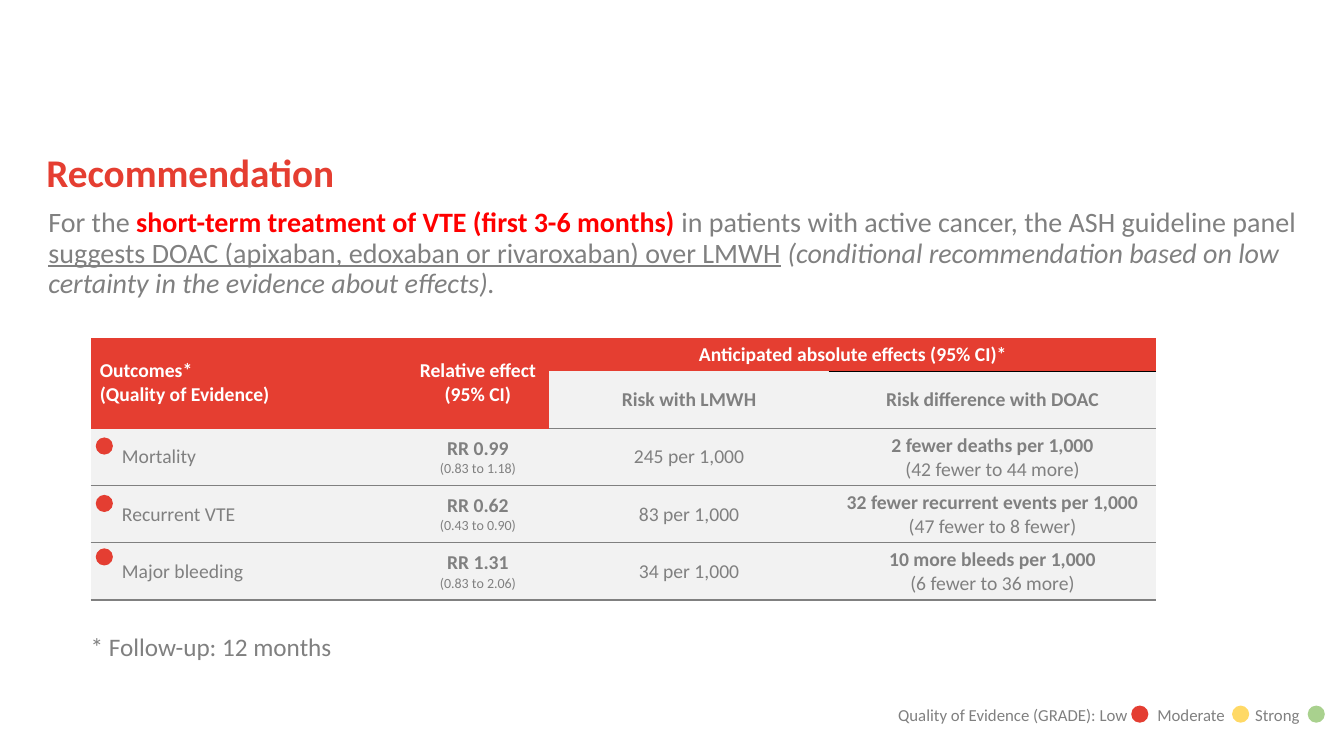
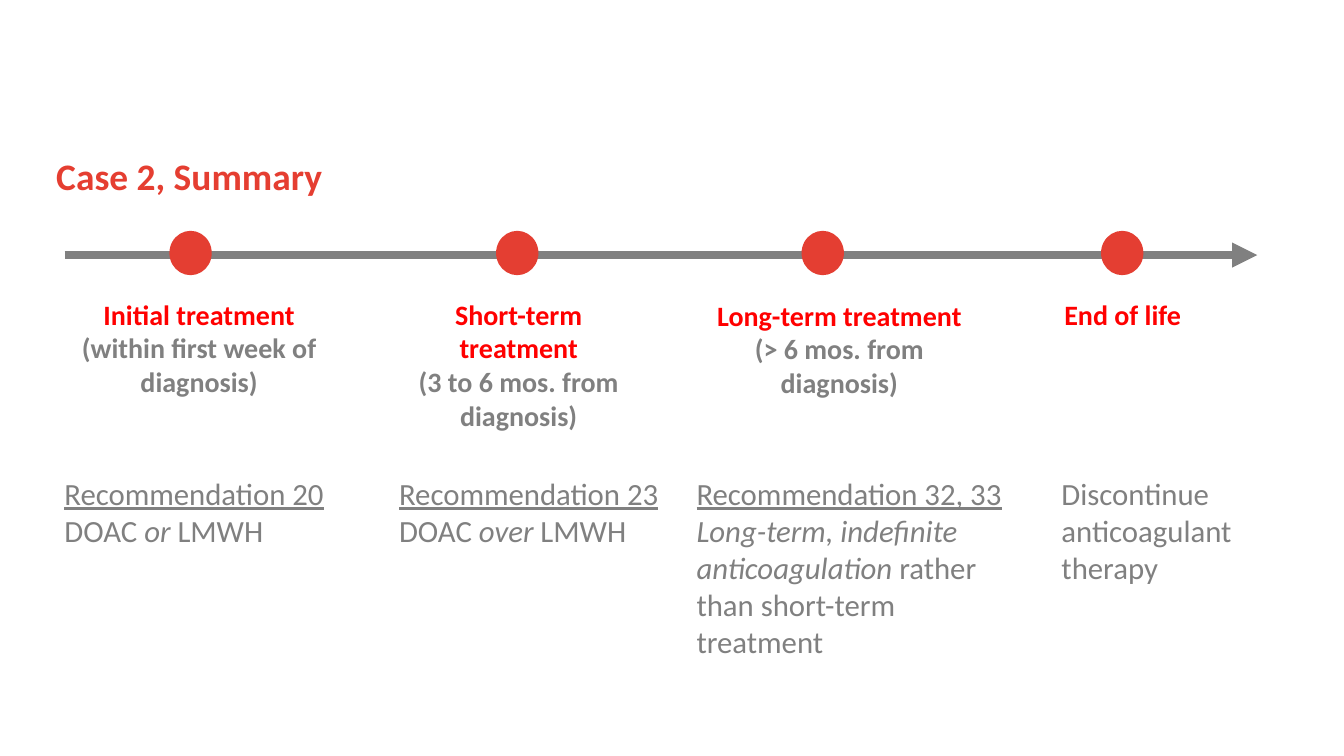
from dataclasses import dataclass

from lxml.etree import SubElement
from pptx import Presentation
from pptx.dml.color import RGBColor
from pptx.enum.shapes import MSO_CONNECTOR, MSO_SHAPE
from pptx.enum.text import MSO_ANCHOR, PP_ALIGN
from pptx.oxml.ns import qn
from pptx.util import Inches, Pt

COLORS = {
    "title": "E53E31", "low": "E43E32", "moderate": "FFD966", "strong": "A9D18E",
    "gray": "808080", "accent": "FF0000", "white": "FFFFFF", "cell": "F2F2F2",
    "black": "000000",
}
FONT = "Calibri"
NO_TABLE_STYLE = "{2D5ABB26-0587-4C30-8999-92F81FD0307C}"


@dataclass
class Span:
    text: str
    color: str = "gray"
    bold: bool = False
    italic: bool = False
    underline: bool = False
    size: float = 0  # zero takes the size of the box


def rgb(name):
    return RGBColor.from_string(COLORS[name])


class SlideBuilder:
    def __init__(self):
        self.deck = Presentation()
        self.deck.slide_width = Inches(13.33)
        self.deck.slide_height = Inches(7.5)
        self.page = None

    def new_page(self, title, size, inset=0.0):
        self.page = self.deck.slides.add_slide(self.deck.slide_layouts[6])
        # The inset is vertical and horizontal in the ratio 1 to 2
        self.text(0.46, 1.47, 12, 0.78, [[Span(title, "title", bold=True)]], size,
                  insets=(2 * inset, inset))

    def fill_text(self, frame, paras, size, align=PP_ALIGN.LEFT, spacing=None, tabs=()):
        frame.word_wrap = True
        for index, spans in enumerate(paras):
            para = frame.paragraphs[0] if index == 0 else frame.add_paragraph()
            para.alignment = align
            if spacing:
                para.line_spacing = spacing
            if tabs:
                tab_list = SubElement(para._p.get_or_add_pPr(), qn("a:tabLst"))
                for position in tabs:
                    SubElement(tab_list, qn("a:tab"), pos=str(Inches(position)), algn="l")
            for span in spans:
                run = para.add_run()
                run.text = span.text
                font = run.font
                font.name, font.size = FONT, Pt(span.size or size)
                font.bold, font.italic = span.bold, span.italic
                font.underline = span.underline
                font.color.rgb = rgb(span.color)

    def text(self, left, top, width, height, paras, size, insets=(0.1, 0.05), **layout):
        box = self.page.shapes.add_textbox(
            Inches(left), Inches(top), Inches(width), Inches(height))
        frame = box.text_frame
        frame.margin_left = frame.margin_right = Inches(insets[0])
        frame.margin_top = frame.margin_bottom = Inches(insets[1])
        self.fill_text(frame, paras, size, **layout)

    def dot(self, left, top, color="low", width=0.17, height=0.17):
        shape = self.page.shapes.add_shape(
            MSO_SHAPE.OVAL, Inches(left), Inches(top), Inches(width), Inches(height))
        shape.shadow.inherit = False
        shape.fill.solid()
        shape.fill.fore_color.rgb = rgb(color)
        shape.line.fill.background()

    def arrow(self, left, right, top, width):
        line = self.page.shapes.add_connector(
            MSO_CONNECTOR.STRAIGHT, Inches(left), Inches(top), Inches(right), Inches(top))
        line.line.color.rgb = rgb("gray")
        line.line.width = Pt(width)
        SubElement(line.line._get_or_add_ln(), qn("a:tailEnd"), type="triangle")
        SubElement(line._element.spPr, qn("a:effectLst"))

    def table(self, left, top, columns, rows):
        frame = self.page.shapes.add_table(
            len(rows), len(columns), Inches(left), Inches(top),
            Inches(sum(columns)), Inches(sum(rows)))
        table = frame.table
        table.first_row = table.horz_banding = False
        table._tbl.tblPr.find(qn("a:tableStyleId")).text = NO_TABLE_STYLE
        for column, width in zip(table.columns, columns):
            column.width = Inches(width)
        for row, height in zip(table.rows, rows):
            row.height = Inches(height)
        return table

    def cell(self, cell, paras, fill="cell", align=PP_ALIGN.CENTER, indent=0.09, borders=()):
        for side, color in borders:
            line = SubElement(cell._tc.get_or_add_tcPr(), qn(f"a:ln{side}"), w=str(Pt(1)))
            solid = SubElement(line, qn("a:solidFill"))
            SubElement(solid, qn("a:srgbClr"), val=COLORS[color])
        cell.fill.solid()
        cell.fill.fore_color.rgb = rgb(fill)
        cell.vertical_anchor = MSO_ANCHOR.MIDDLE
        cell.margin_left, cell.margin_right = Inches(indent), Inches(0.09)
        cell.margin_top = cell.margin_bottom = Inches(0.05)
        self.fill_text(cell.text_frame, paras, 14, align=align)


def build_recommendation(slide):
    slide.new_page("Recommendation", 28)
    slide.text(0.48, 2.07, 12.64, 1.69, [[
        Span("For the "),
        Span("short-term treatment of VTE (first 3-6 months)", "accent", bold=True),
        Span(" in patients with active cancer, the ASH guideline panel "),
        Span("suggests DOAC (apixaban, edoxaban or rivaroxaban) over LMWH", underline=True),
        Span(" "),
        Span("(conditional recommendation based on low certainty in the evidence "
             "about effects).", italic=True),
    ]], 20, insets=(0, 0), spacing=0.9)

    # Quality legend
    slide.text(8.81, 6.94, 4.53, 0.3,
               [[Span("Quality of Evidence (GRADE): Low\tModerate\tStrong")]], 12,
               tabs=(2.57, 3.54))
    for left, color in ((11.22, "low"), (12.22, "moderate"), (12.97, "strong")):
        slide.dot(left, 7, color)

    # Table header
    table = slide.table(0.9, 3.35, (3.13, 1.42, 2.77, 3.25), (0.31, 0.46, 0.52, 0.52, 0.52))
    bottom = ("B", "gray")
    headers = (
        ((0, 0), (1, 0), ("Outcomes*", "(Quality of Evidence)"), PP_ALIGN.LEFT),
        ((0, 1), (1, 1), ("Relative effect", "(95% CI)"), PP_ALIGN.CENTER),
        ((0, 2), (0, 3), ("Anticipated absolute effects (95% CI)*",), PP_ALIGN.CENTER),
    )
    for start, end, lines, align in headers:
        cell = table.cell(*start)
        cell.merge(table.cell(*end))
        slide.cell(cell, [[Span(line, "white", bold=True)] for line in lines], "title", align)
    slide.cell(table.cell(1, 2), [[Span("Risk with LMWH", bold=True)]], borders=[bottom])
    slide.cell(table.cell(1, 3), [[Span("Risk difference with DOAC", bold=True)]],
               borders=[("T", "black"), bottom])

    # Outcome rows, each with its quality dot
    outcomes = (
        (4.34, "Mortality", "RR 0.99", "(0.83 to 1.18)", "245 per 1,000",
         "2 fewer deaths per 1,000", "(42 fewer to 44 more)"),
        (4.91, "Recurrent VTE", "RR 0.62", "(0.43 to 0.90)", "83 per 1,000",
         "32 fewer recurrent events per 1,000", "(47 fewer to 8 fewer)"),
        (5.44, "Major bleeding", "RR 1.31", "(0.83 to 2.06)", "34 per 1,000",
         "10 more bleeds per 1,000", "(6 fewer to 36 more)"),
    )
    for row, (dot_top, name, ratio, interval, risk, change, spread) in enumerate(outcomes, 2):
        slide.cell(table.cell(row, 0), [[Span(name)]], align=PP_ALIGN.LEFT,
                   indent=0.31, borders=[bottom])
        contents = (
            [[Span(ratio, bold=True)], [Span(interval, size=10)]],
            [[Span(risk)]],
            [[Span(change, bold=True)], [Span(spread)]],
        )
        for column, paras in enumerate(contents, 1):
            slide.cell(table.cell(row, column), paras, borders=[bottom])
        slide.dot(0.95, dot_top)

    slide.text(0.8, 6.21, 2.62, 0.4, [[Span("* Follow-up: 12 months")]], 18)


def build_summary(slide):
    slide.new_page("Case 2, Summary", 26.7, inset=0.05)
    slide.arrow(0.64, 12.47, 2.53, 6)

    # Phases: dot left, label left and top, name, period
    phases = (
        (1.68, 0.64, 2.9, "Initial treatment", "(within first week of diagnosis)"),
        (4.92, 3.81, 2.9, "Short-term treatment", "(3 to 6 mos. from diagnosis)"),
        (7.95, 6.99, 2.91, "Long-term treatment", "(> 6 mos. from diagnosis)"),
        (10.92, 9.8, 2.9, "End of life", ""),
    )
    for dot_left, left, top, name, period in phases:
        slide.dot(dot_left, 2.29, width=0.42, height=0.44)
        paras = [[Span(name, "accent", bold=True)]]
        if period:
            paras.append([Span(period, bold=True)])
        slide.text(left, top, 2.67, 1.11, paras, 20, align=PP_ALIGN.CENTER)

    # Advice under each phase
    advice = (
        (0.54, 2.95, "Recommendation 20",
         [Span("DOAC "), Span("or", italic=True), Span(" LMWH")]),
        (3.86, 2.95, "Recommendation 23",
         [Span("DOAC "), Span("over", italic=True), Span(" LMWH")]),
        (6.81, 3.42, "Recommendation 32, 33",
         [Span("Long-term, indefinite anticoagulation ", italic=True),
          Span("rather than short-term treatment")]),
        (10.43, 2.37, "", [Span("Discontinue anticoagulant therapy")]),
    )
    for left, width, heading, spans in advice:
        paras = [[Span(heading, underline=True)], spans] if heading else [spans]
        slide.text(left, 4.66, width, 1.21, paras, 22)


def main():
    slide = SlideBuilder()
    build_recommendation(slide)
    build_summary(slide)
    slide.deck.save("out.pptx")


if __name__ == "__main__":
    main()
